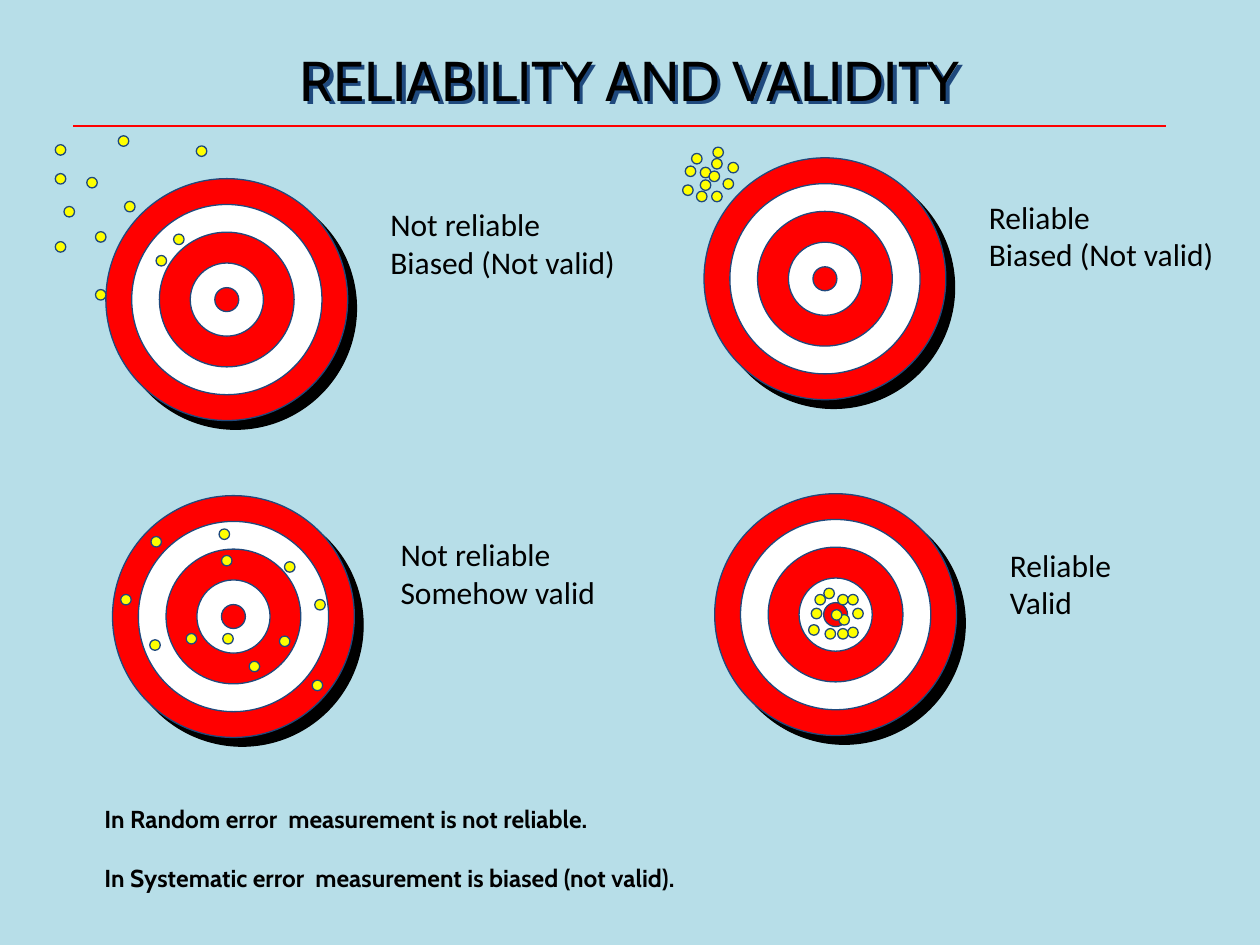
from lxml.etree import SubElement
from pptx import Presentation
from pptx.dml.color import RGBColor
from pptx.enum.shapes import MSO_CONNECTOR, MSO_SHAPE
from pptx.enum.text import MSO_ANCHOR, MSO_AUTO_SIZE, PP_ALIGN
from pptx.oxml.ns import qn
from pptx.util import Pt

SKY = RGBColor(0xB7, 0xDE, 0xE8)
RED = RGBColor(0xFF, 0x00, 0x00)
WHITE = RGBColor(0xFF, 0xFF, 0xFF)
YELLOW = RGBColor(0xFF, 0xFF, 0x00)
NAVY = RGBColor(0x1F, 0x49, 0x7D)
BLACK = RGBColor(0x00, 0x00, 0x00)

RINGS = [(138.2, RED), (108.7, WHITE), (77, RED), (41.8, WHITE), (13.7, RED)]
DOT = 6

# Each target: centre, then the centres of its hits.
TARGETS = [
    ((471.4, 159.3), [
        (394.6, 97.9), (393.1, 108.7), (403.2, 105.8), (403.2, 98.6),
        (419, 95.8), (416.2, 105.1), (401, 112.3), (409.7, 112.3),
        (409.7, 93.6), (410.4, 87.1), (398.2, 90.7), (408.2, 100.8)]),
    ((129.6, 171.2), [
        (34.6, 102.2), (39.6, 121), (34.6, 141.1), (52.6, 104.4),
        (102.2, 136.8), (92.2, 149), (57.6, 168.5), (57.6, 135.4),
        (70.6, 80.6), (115.2, 86.4), (34.6, 85.7), (74.2, 118.1)]),
    ((477.5, 351.2), [
        (466.6, 350.6), (465.1, 360), (487.4, 361.4), (482.4, 354.2),
        (490.3, 350.6), (481.7, 342.7), (468.7, 342.7), (474.5, 362.2),
        (473.8, 339.1), (487.4, 342.7), (481.7, 362.2), (478.1, 351.4)]),
    ((133.4, 352.3), [
        (88.6, 368.6), (72, 342.7), (130.3, 365), (128.2, 305.3),
        (182.9, 345.6), (162.7, 366.5), (109.4, 365), (145.4, 380.9),
        (129.6, 320.4), (165.6, 324), (89.3, 309.6), (181.4, 391.7)]),
]

LABELS = [
    (216, 113.8, 144, ["Not reliable", "Biased (Not valid)"]),
    (558, 109.4, 150, ["Reliable", "Biased (Not valid)"]),
    (221.8, 302.4, 132, ["Not reliable", "Somehow valid"]),
    (570, 308.2, 96, ["Reliable", "Valid"]),
]

NOTES = ["In Random error  measurement is not reliable.",
         "In Systematic error  measurement is biased (not valid)."]


def add_shadow(sp, dist, color):
    """Give a shape a hard shadow to its lower right."""
    sp.shadow.inherit = False
    effects = sp._element.spPr.find(qn("a:effectLst"))
    shadow = SubElement(effects, qn("a:outerShdw"), dist=str(Pt(dist)),
                        dir="2700000", algn="ctr", rotWithShape="0")
    SubElement(shadow, qn("a:srgbClr"), val=str(color))


def add_run(p, text, size, font, bold=None):
    """Add one formatted black run to a paragraph."""
    r = p.add_run()
    r.text = text
    r.font.size = Pt(size)
    r.font.name = font
    r.font.bold = bold
    r.font.color.rgb = BLACK


def add_title(s, text):
    """Place and format the title placeholder."""
    sp = s.shapes.title
    sp.left, sp.top, sp.width, sp.height = Pt(54), Pt(0), Pt(612), Pt(90)
    add_shadow(sp, 2.83, NAVY)
    tf = sp.text_frame
    tf.vertical_anchor = MSO_ANCHOR.MIDDLE
    p = tf.paragraphs[0]
    p.alignment = PP_ALIGN.CENTER
    add_run(p, text, 32, "Cabin")


def add_disc(shapes, center, size, color):
    """Add an outlined circle around a centre and return it."""
    x, y = center
    sp = shapes.add_shape(MSO_SHAPE.OVAL, Pt(x - size / 2), Pt(y - size / 2),
                          Pt(size), Pt(size))
    sp.shadow.inherit = False
    sp.fill.solid()
    sp.fill.fore_color.rgb = color
    sp.line.color.rgb = NAVY
    sp.line.width = Pt(0.75)
    return sp


def add_target(s, center, hits):
    """Add a grouped target with its rings and hits."""
    shapes = s.shapes.add_group_shape().shapes
    discs = [add_disc(shapes, center, size, color) for size, color in RINGS]
    add_shadow(discs[0], 7.1, BLACK)
    for hit in hits:
        add_disc(shapes, hit, DOT, YELLOW)


def add_rule(s):
    """Add the red line under the title."""
    cn = s.shapes.add_connector(MSO_CONNECTOR.STRAIGHT,
                                Pt(42), Pt(72), Pt(666), Pt(72))
    cn.line.color.rgb = RED
    cn.line.width = Pt(0.75)
    SubElement(cn._element.spPr, qn("a:effectLst"))


def add_text(s, box, lines, size, font, bold=None, gap=0):
    """Add a text box with one paragraph per line."""
    tf = s.shapes.add_textbox(*map(Pt, box)).text_frame
    tf.word_wrap = True
    tf.auto_size = MSO_AUTO_SIZE.SHAPE_TO_FIT_TEXT
    for i, line in enumerate(lines):
        p = tf.add_paragraph() if i else tf.paragraphs[0]
        p.space_before = Pt(gap if i else 0)
        add_run(p, line, size, font, bold)


def main():
    """Build the slide and save it."""
    prs = Presentation()
    prs.slide_width, prs.slide_height = Pt(720), Pt(540)
    s = prs.slides.add_slide(prs.slide_layouts[5])
    s.background.fill.solid()
    s.background.fill.fore_color.rgb = SKY
    add_title(s, "RELIABILITY AND VALIDITY")
    for center, hits in TARGETS:
        add_target(s, center, hits)
    add_rule(s)
    add_text(s, (52.6, 455.8, 493.2, 58.3), NOTES, 14, "Cabin", True, 17)
    for x, y, width, lines in LABELS:
        add_text(s, (x, y, width, 51.1), lines, 18, "Calibri")
    prs.save("out.pptx")


if __name__ == "__main__":
    main()
